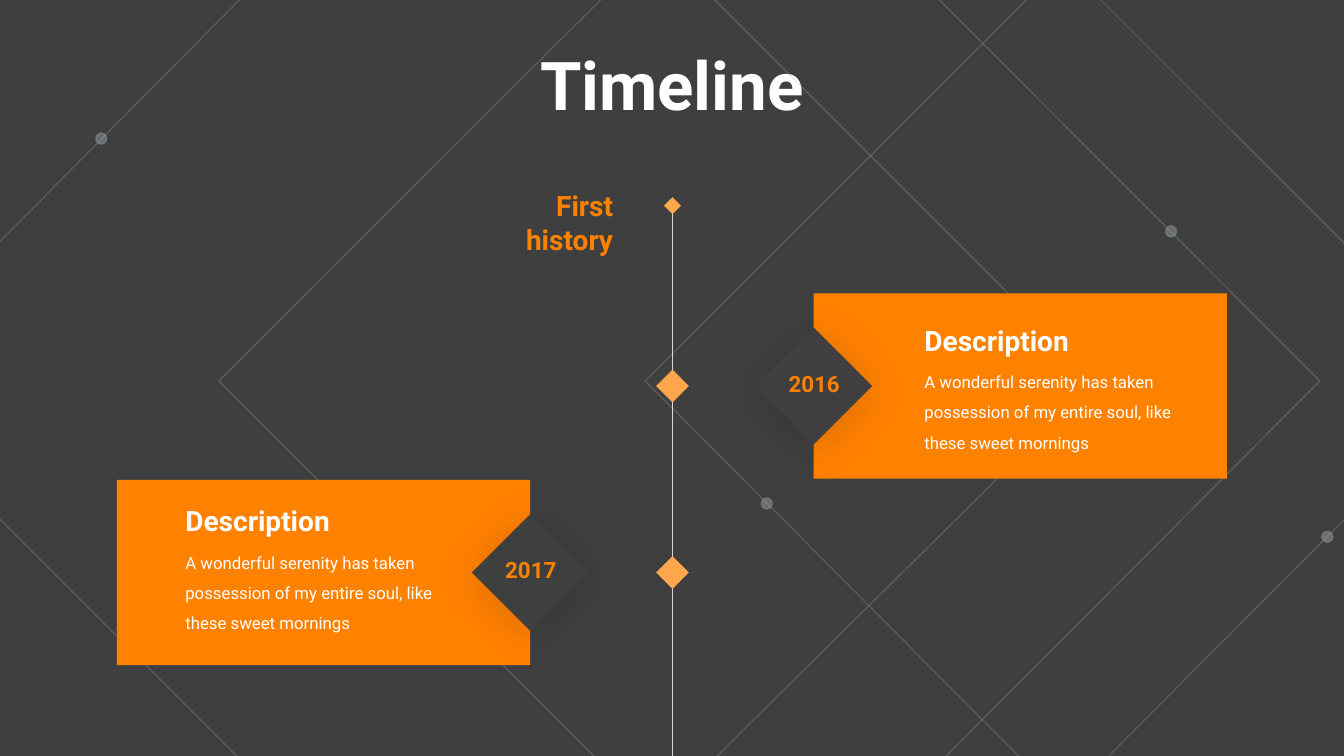
import pptx
import pptx.dml.color
import pptx.enum.shapes
import pptx.enum.text
import pptx.oxml
import pptx.oxml.ns
import pptx.util

Inches = pptx.util.Inches
Pt = pptx.util.Pt
SHAPES = pptx.enum.shapes.MSO_SHAPE
ALIGN = pptx.enum.text.PP_ALIGN
ANCHOR = pptx.enum.text.MSO_ANCHOR
FIT = pptx.enum.text.MSO_AUTO_SIZE

COLORS = {
    "background": "3F3F3F",
    "orange": "FF8100",
    "marker": "FFA74C",
    "axis": "D2D9DD",
    "pattern": "A5B4BB",
    "white": "FFFFFF",
}
FONT = "Roboto"
AXIS_X = 6.67
BODY = ("A wonderful serenity has taken possession of my entire soul, "
        "like these sweet mornings")


def rgb(name):
    return pptx.dml.color.RGBColor.from_string(COLORS[name])


def set_alpha(fill, percent):
    """Make the solid fill inside the given XML element translucent."""
    color = fill.find(".//" + pptx.oxml.ns.qn("a:srgbClr"))
    alpha = color.makeelement(pptx.oxml.ns.qn("a:alpha"), {"val": str(percent * 1000)})
    color.append(alpha)


def add_effects(shape, effects=""):
    namespace = pptx.oxml.ns.nsdecls("a")
    shape._element.spPr.append(pptx.oxml.parse_xml(
        f"<a:effectLst {namespace}>{effects}</a:effectLst>"))


def set_pattern_line(shape, width):
    shape.line.color.rgb = rgb("pattern")
    shape.line.width = Pt(width)
    set_alpha(shape.line._ln, 29)


def format_text(shape, text, size, color, bold=False, anchor=ANCHOR.TOP,
                fit=FIT.SHAPE_TO_FIT_TEXT, **paragraph_format):
    frame = shape.text_frame
    frame.text = text
    for name, value in {"word_wrap": True, "auto_size": fit,
                        "vertical_anchor": anchor}.items():
        setattr(frame, name, value)
    paragraph = frame.paragraphs[0]
    for name, value in paragraph_format.items():
        setattr(paragraph, name, value)
    font = paragraph.runs[0].font
    for name, value in {"name": FONT, "size": Pt(size), "bold": bold}.items():
        setattr(font, name, value)
    font.color.rgb = rgb(color)


def add_text(slide, box, text, size, color, **options):
    shape = slide.shapes.add_textbox(*map(Inches, box))
    format_text(shape, text, size, color, **options)


def add_block(slide, kind, box, color):
    shape = slide.shapes.add_shape(kind, *map(Inches, box))
    shape.shadow.inherit = False
    shape.fill.solid()
    shape.fill.fore_color.rgb = rgb(color)
    shape.line.fill.background()
    return shape


def add_turned_square(slide, center_x, center_y, side, color):
    box = (center_x - side / 2, center_y - side / 2, side, side)
    square = add_block(slide, SHAPES.RECTANGLE, box, color)
    square.rotation = 45
    return square


def add_background(slide):
    slide.background.fill.solid()
    slide.background.fill.fore_color.rgb = rgb("background")
    # Large outlined diamonds: left, top, right, bottom, top corner x
    for left, top, right, bottom, middle in (
            (6.4, -0.37, 14.7, 7.95, 10.55),
            (2.17, -1.68, 13.09, 9.25, 7.64),
            (-1.37, -2.37, 10.87, 9.87, 4.72)):
        center_y = 3.78
        builder = slide.shapes.build_freeform(Inches(middle), Inches(bottom))
        corners = ((left, center_y), (middle, top), (right, center_y))
        builder.add_line_segments([(Inches(x), Inches(y)) for x, y in corners])
        diamond = builder.convert_to_shape()
        diamond.shadow.inherit = False
        diamond.fill.background()
        set_pattern_line(diamond, 0.75)
    # Small dots on the diamond lines
    for left, top in ((7.55, 4.94), (11.56, 2.24), (13.11, 5.27), (0.95, 1.32)):
        dot = add_block(slide, SHAPES.OVAL, (left, top, 0.11, 0.11), "pattern")
        set_alpha(dot._element.spPr.find(pptx.oxml.ns.qn("a:solidFill")), 40)
        set_pattern_line(dot, 1)


def add_title(slide, box):
    title = slide.shapes.title
    for name, value in zip(("left", "top", "width", "height"), box):
        setattr(title, name, Inches(value))
    format_text(title, "Timeline", 48, "white", bold=True, anchor=ANCHOR.MIDDLE,
                fit=FIT.NONE, alignment=ALIGN.CENTER, space_before=Pt(10))


def add_axis(slide, top, bottom):
    axis = slide.shapes.add_connector(
        pptx.enum.shapes.MSO_CONNECTOR.STRAIGHT,
        Inches(AXIS_X), Inches(top), Inches(AXIS_X), Inches(bottom))
    axis.line.color.rgb = rgb("axis")
    axis.line.width = Pt(1)
    add_effects(axis)
    add_turned_square(slide, AXIS_X, top, 0.12, "marker")
    add_text(slide, (4.78, top - 0.22, 1.4, 0.77), "First history", 20, "orange",
             bold=True, alignment=ALIGN.RIGHT)


def add_card(slide, box, year, badge_x, text_offset):
    """Draw a card with its year badge on one edge and its marker on the axis."""
    left, top, width, height = box
    center_y = top + height / 2
    add_block(slide, SHAPES.RECTANGLE, box, "orange")
    # Year badge with a soft shadow
    badge = add_turned_square(slide, badge_x, center_y, 0.82, "background")
    badge._element.spPr.remove(badge._element.spPr.find(pptx.oxml.ns.qn("a:effectLst")))
    add_effects(badge, f'<a:outerShdw blurRad="{Pt(31)}" dist="{Pt(4)}" dir="5400000" '
                       'algn="t" rotWithShape="0"><a:srgbClr val="000000">'
                       '<a:alpha val="15000"/></a:srgbClr></a:outerShdw>')
    add_text(slide, (badge_x - 0.58, center_y - 0.21, 1.17, 0.37), year, 16, "orange",
             bold=True, alignment=ALIGN.CENTER)
    # Heading and body
    text_left, text_top = left + text_offset[0], top + text_offset[1]
    add_text(slide, (text_left, text_top, 2.01, 0.44), "Description", 20, "white", bold=True)
    add_text(slide, (text_left, text_top + 0.38, 2.73, 0.98), BODY, 12, "white",
             line_spacing=1.5)
    add_turned_square(slide, AXIS_X, center_y, 0.23, "marker")


def main():
    presentation = pptx.Presentation()
    presentation.slide_width = Inches(13.33)
    presentation.slide_height = Inches(7.5)
    slide = presentation.slides.add_slide(presentation.slide_layouts[5])
    add_background(slide)
    add_title(slide, (1.81, 0.28, 9.71, 1.1))
    add_axis(slide, 2.04, 7.5)
    add_card(slide, (8.07, 2.91, 4.1, 1.84), "2016", 8.07, (1, 0.25))
    add_card(slide, (1.16, 4.76, 4.1, 1.84), "2017", 5.26, (0.58, 0.19))
    presentation.save("out.pptx")


if __name__ == "__main__":
    main()
